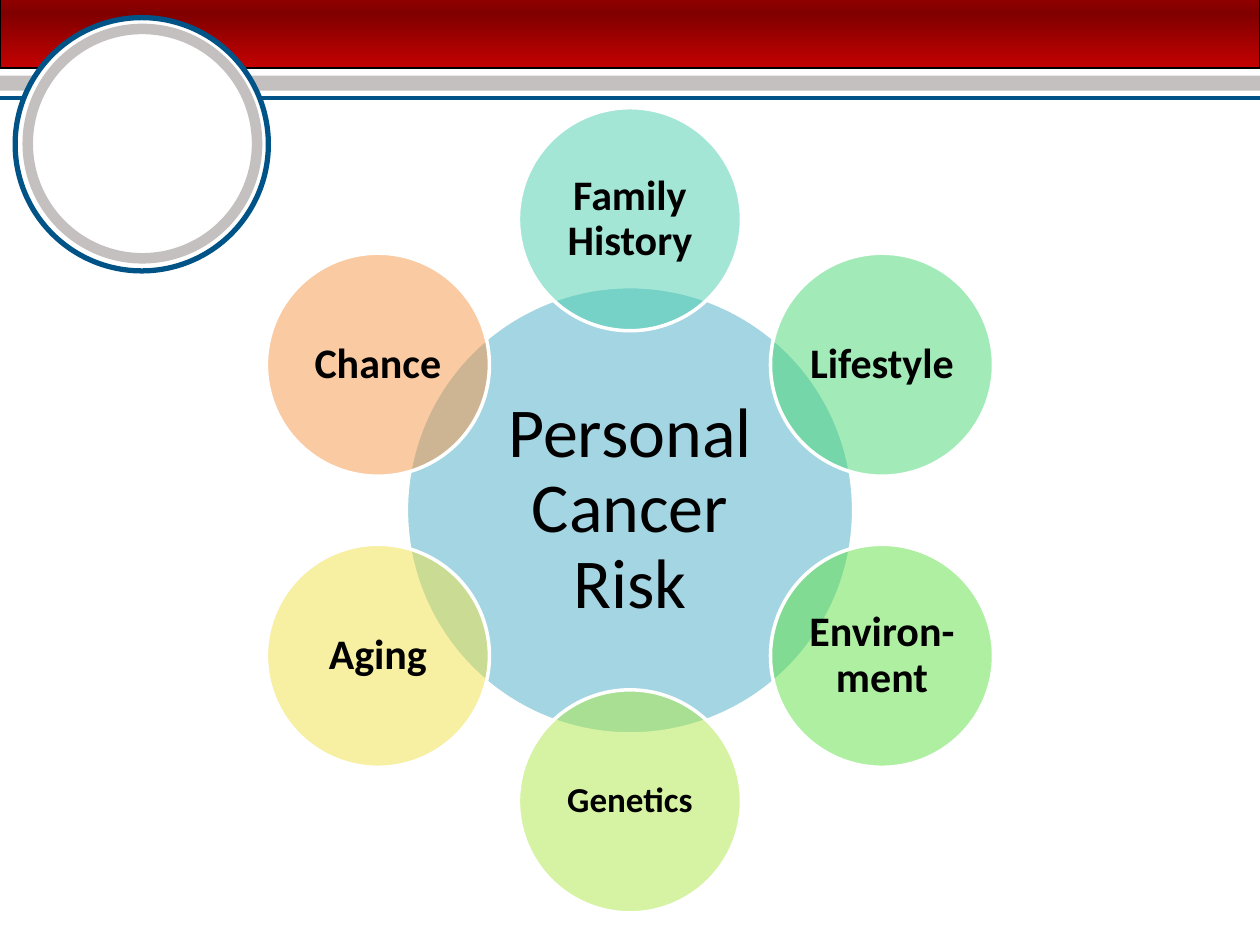
"""Build a slide of six risk factors around a personal cancer risk hub."""
from copy import deepcopy
from dataclasses import dataclass
from math import cos, radians, sin
from typing import Optional

from pptx import Presentation
from pptx.dml.color import RGBColor
from pptx.enum.shapes import MSO_CONNECTOR, MSO_SHAPE
from pptx.enum.text import MSO_ANCHOR, PP_ALIGN
from pptx.oxml import parse_xml
from pptx.oxml.ns import nsdecls, qn
from pptx.util import Inches, Pt

RECT = MSO_SHAPE.RECTANGLE
OVAL = MSO_SHAPE.OVAL
STRAIGHT = MSO_CONNECTOR.STRAIGHT
MIDDLE = MSO_ANCHOR.MIDDLE
CENTER = PP_ALIGN.CENTER

BLACK = RGBColor(0x00, 0x00, 0x00)
WHITE = RGBColor(0xFF, 0xFF, 0xFF)
RED = RGBColor(0xC4, 0x01, 0x01)
MAROON = RGBColor(0x80, 0x00, 0x00)
GRAY = RGBColor(0xC4, 0xC0, 0xC0)
NAVY = RGBColor(0x00, 0x53, 0x87)
BLUE = RGBColor(0x4B, 0xAC, 0xC6)
TEAL = RGBColor(0x49, 0xCF, 0xAE)
MINT = RGBColor(0x47, 0xD8, 0x72)
GREEN = RGBColor(0x60, 0xE1, 0x46)
LIME = RGBColor(0xAC, 0xE9, 0x46)
YELLOW = RGBColor(0xF0, 0xE1, 0x46)
ORANGE = RGBColor(0xF7, 0x96, 0x46)

WIDTH, HEIGHT = 10, 7.5
MID_X, MID_Y = 5, 4.05
HUB_SIZE, NODE_SIZE = 3.55, 1.77
ORBIT = 2.31


@dataclass
class Disc:
    text: str
    color: RGBColor
    points: int = 24
    bold: bool = True
    size: float = NODE_SIZE
    inset: float = 0.03


HUB = Disc("Personal Cancer Risk", BLUE, 40, False, HUB_SIZE, 0.06)
NODES = [
    Disc("Family History", TEAL),
    Disc("Lifestyle", MINT),
    Disc("Environ-ment", GREEN),
    Disc("Genetics", LIME, 20),
    Disc("Aging", YELLOW),
    Disc("Chance", ORANGE),
]


def add_form(slide, kind, box: tuple, fill: RGBColor,
             line: Optional[RGBColor] = None, width: float = 0):
    form = slide.shapes.add_shape(kind, *map(Inches, box))
    form.shadow.inherit = False
    form.fill.solid()
    form.fill.fore_color.rgb = fill
    if line is None:
        form.line.fill.background()
    else:
        form.line.color.rgb = line
        form.line.width = Pt(width)
    return form


def add_band(slide) -> None:
    band = add_form(slide, RECT, (0, -0.34, WIDTH, 0.88), RED, BLACK, 0.75)
    band.fill.gradient()
    band.fill.gradient_angle = 270
    stops = next(band._element.spPr.iter(qn("a:gsLst")))
    stops.append(deepcopy(stops[0]))
    tints = ((0, RED), (0.51, MAROON), (1, RED))
    for stop, (place, color) in zip(band.fill.gradient_stops, tints):
        stop.position = place
        stop.color.rgb = color


def add_rule(slide, top: float) -> None:
    rule = slide.shapes.add_connector(
        STRAIGHT, 0, Inches(top), Inches(WIDTH), Inches(top))
    rule.line.color.rgb = NAVY
    rule.line.width = Pt(2.25)
    rule._element.spPr.append(parse_xml(f"<a:effectLst {nsdecls('a')}/>"))


def add_disc(slide, disc: Disc, x: float, y: float) -> None:
    half = disc.size / 2
    box = (x - half, y - half, disc.size, disc.size)
    form = add_form(slide, OVAL, box, disc.color, WHITE, 2)
    tint = form._element.spPr.find(qn("a:solidFill"))[0]
    tint.append(parse_xml(f'<a:alpha {nsdecls("a")} val="50000"/>'))
    frame = form.text_frame
    frame.text = disc.text
    para = frame.paragraphs[0]
    inset = Inches(disc.inset)
    looks = (
        (frame, {"word_wrap": True, "vertical_anchor": MIDDLE,
                 "margin_left": inset, "margin_right": inset,
                 "margin_top": inset, "margin_bottom": inset}),
        (para, {"alignment": CENTER, "line_spacing": 0.9}),
        (para.runs[0].font, {"name": "Calibri", "size": Pt(disc.points),
                             "bold": disc.bold}),
    )
    for part, look in looks:
        for name, value in look.items():
            setattr(part, name, value)
    para.runs[0].font.color.rgb = BLACK


def main() -> None:
    deck = Presentation()
    deck.slide_width, deck.slide_height = Inches(WIDTH), Inches(HEIGHT)
    slide = deck.slides.add_slide(deck.slide_layouts[6])
    add_band(slide)
    add_form(slide, RECT, (0, 0.6, WIDTH, 0.12), GRAY)
    add_rule(slide, 0.78)
    add_form(slide, OVAL, (0.12, 0.14, 2.01, 2.01), WHITE, NAVY, 3)
    add_form(slide, OVAL, (0.22, 0.23, 1.82, 1.82), WHITE, GRAY, 6)
    add_disc(slide, HUB, MID_X, MID_Y)
    for i, node in enumerate(NODES):
        turn = radians(i * 360 / len(NODES))
        add_disc(slide, node, MID_X + ORBIT * sin(turn),
                 MID_Y - ORBIT * cos(turn))
    deck.save("out.pptx")


if __name__ == "__main__":
    main()
